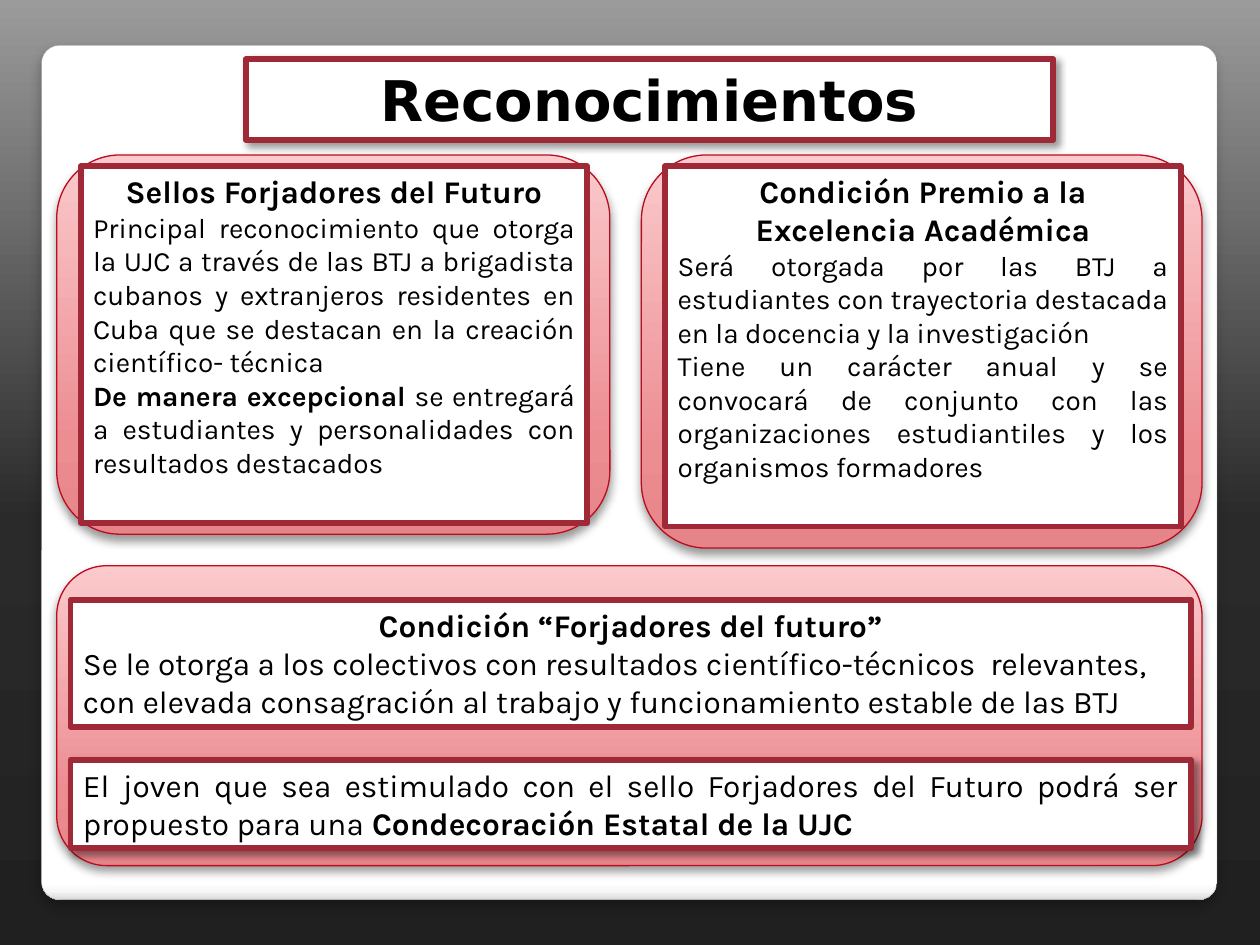
"""Build the Reconocimientos slide."""
from dataclasses import dataclass

from lxml import etree
from pptx import Presentation
from pptx.dml.color import RGBColor
from pptx.enum.shapes import MSO_SHAPE
from pptx.enum.text import MSO_ANCHOR, MSO_AUTO_SIZE, PP_ALIGN
from pptx.oxml.ns import qn
from pptx.util import Inches, Pt

ROUNDED = MSO_SHAPE.ROUNDED_RECTANGLE
ALTERNATE = MSO_SHAPE.FLOWCHART_ALTERNATE_PROCESS
RECTANGLE = MSO_SHAPE.RECTANGLE
CENTER, JUSTIFY, LEFT = PP_ALIGN.CENTER, PP_ALIGN.JUSTIFY, PP_ALIGN.LEFT
TOP, MIDDLE = MSO_ANCHOR.TOP, MSO_ANCHOR.MIDDLE
NO_AUTOFIT = MSO_AUTO_SIZE.NONE
TITLE_ONLY = 5


@dataclass(frozen=True)
class Theme:
    """Colours, fonts, sizes and effects of the slide."""
    text: str = "000000"
    paper: str = "FFFFFF"
    frame: str = "9F2936"
    card_edge: str = "BC0B1F"
    panel_edge: str = "A4A4A4"
    backdrop: tuple = ((0, "202020"), (45, "2A2A2A"), (100, "9B9B9B"))
    panel: tuple = ((0, "FFFFFF"), (98, "FFFFFF"), (99, "F7F7F7"), (100, "DADADA"))
    card: tuple = ((0, "E68589"), (25, "EC8D92"), (100, "FBCACC"))
    title_font: str = "DejaVu Sans"
    body_font: str = "Karla"
    title_size: int = 32
    large: int = 18
    small: int = 16
    frame_width: float = 3.35
    panel_shadow: tuple = (25, 6, 4, 90)
    card_shadow: tuple = (40, 5.2, 3, 90)
    frame_shadow: tuple = (40, 4, 3, 45)


THEME = Theme()


def place(shape, box):
    """Move and size a shape to a box in inches."""
    shape.left, shape.top, shape.width, shape.height = map(Inches, box)


def set_gradient(fill, owner, stops, angle):
    """Give a fill its gradient stops and direction."""
    fill.gradient()
    gradient = next(owner.iter(qn("a:gradFill")))
    stop_list = gradient.find(qn("a:gsLst"))
    for old_stop in list(stop_list):
        stop_list.remove(old_stop)
    for position, colour in stops:
        stop = etree.SubElement(stop_list, qn("a:gs"), pos=str(position * 1000))
        etree.SubElement(stop, qn("a:srgbClr"), val=colour)
    gradient.find(qn("a:lin")).set("ang", str(angle * 60000))


def set_line(shape, colour, width):
    """Outline a shape."""
    shape.line.color.rgb = RGBColor.from_string(colour)
    shape.line.width = Pt(width)


def set_shadow(shape, shadow=None):
    """Replace the inherited shadow with the given one, if any."""
    shape.shadow.inherit = False
    if shadow:
        opacity, blur, distance, angle = shadow
        effects = shape._element.spPr.find(qn("a:effectLst"))
        outer = etree.SubElement(
            effects, qn("a:outerShdw"), blurRad=str(Pt(blur)), dist=str(Pt(distance)),
            dir=str(angle * 60000), algn="ctr", rotWithShape="0")
        colour = etree.SubElement(outer, qn("a:srgbClr"), val=THEME.text)
        etree.SubElement(colour, qn("a:alpha"), val=str(opacity * 1000))


def add_gradient_shape(slide, kind, box, stops, angle, edge, shadow):
    """Add a gradient-filled background shape."""
    shape = slide.shapes.add_shape(kind, *map(Inches, box))
    set_gradient(shape.fill, shape._element.spPr, stops, angle)
    set_line(shape, *edge)
    set_shadow(shape, shadow)
    return shape


def style_frame(shape, shadow=None, anchor=TOP):
    """Style a shape as a white box with a dark red border."""
    shape.fill.solid()
    shape.fill.fore_color.rgb = RGBColor.from_string(THEME.paper)
    set_line(shape, THEME.frame, THEME.frame_width)
    set_shadow(shape, shadow)
    shape.text_frame.word_wrap = True
    shape.text_frame.auto_size = NO_AUTOFIT
    shape.text_frame.vertical_anchor = anchor


def write_paragraph(paragraph, align, size, runs, font=THEME.body_font):
    """Write (text, bold) runs into a paragraph."""
    paragraph.alignment = align
    for text, bold in runs:
        run = paragraph.add_run()
        run.text = text
        run.font.name = font
        run.font.size = Pt(size)
        run.font.bold = bold
        run.font.color.rgb = RGBColor.from_string(THEME.text)


def add_framed_text(slide, box, paragraphs, shadow=None):
    """Add a bordered box holding (align, size, runs) paragraphs."""
    frame = slide.shapes.add_shape(RECTANGLE, *map(Inches, box))
    style_frame(frame, shadow)
    body = frame.text_frame
    for index, content in enumerate(paragraphs):
        paragraph = body.add_paragraph() if index else body.paragraphs[0]
        write_paragraph(paragraph, *content)
    return frame


def add_title(slide, box, text):
    """Format the title placeholder and bring it in front of the panel."""
    title = slide.shapes.title
    place(title, box)
    style_frame(title, THEME.frame_shadow, MIDDLE)
    write_paragraph(title.text_frame.paragraphs[0], CENTER, THEME.title_size,
                    [(text, True)], THEME.title_font)
    slide.shapes._spTree.append(title._element)


def main():
    """Build and save the slide."""
    deck = Presentation()
    deck.slide_width, deck.slide_height = Inches(10), Inches(7.5)
    slide = deck.slides.add_slide(deck.slide_layouts[TITLE_ONLY])
    set_gradient(slide.background.fill, slide._element, THEME.backdrop, 270)

    panel = add_gradient_shape(slide, ROUNDED, (0.33, 0.36, 9.33, 6.78), THEME.panel, 90,
                               (THEME.panel_edge, 0.16), THEME.panel_shadow)
    panel.adjustments[0] = 0.021
    add_title(slide, (1.95, 0.47, 6.41, 0.64), "Reconocimientos")

    for card_box in ((0.45, 1.23, 4.39, 3.01), (0.45, 4.49, 9.09, 2.38),
                     (5.09, 1.23, 4.45, 3.12)):
        add_gradient_shape(slide, ALTERNATE, card_box, THEME.card, 270,
                           (THEME.card_edge, 0.75), THEME.card_shadow)

    add_framed_text(slide, (0.64, 1.32, 4.02, 2.83), [
        (CENTER, THEME.large, [("Sellos Forjadores del Futuro", True)]),
        (JUSTIFY, THEME.small, [
            ("Principal reconocimiento que otorga la UJC a través de las BTJ a brigadista "
             "cubanos y extranjeros residentes en Cuba que se destacan en la creación "
             "científico- técnica", False)]),
        (JUSTIFY, THEME.small, [
            ("De manera excepcional ", True),
            ("se entregará a estudiantes y personalidades con resultados destacados", False)]),
    ])
    add_framed_text(slide, (5.28, 1.32, 4.09, 2.86), [
        (CENTER, THEME.large, [("Condición Premio a la Excelencia Académica", True)]),
        (JUSTIFY, THEME.small, [
            ("Será otorgada por las BTJ a estudiantes con trayectoria destacada en la "
             "docencia y la investigación", False)]),
        (JUSTIFY, THEME.small, [
            ("Tiene un carácter anual y se convocará de conjunto con las organizaciones "
             "estudiantiles y los organismos formadores", False)]),
    ])
    add_framed_text(slide, (0.56, 4.76, 8.89, 1.01), [
        (CENTER, THEME.large, [("Condición “Forjadores del futuro”", True)]),
        (LEFT, THEME.large, [
            ("Se le otorga a los colectivos con resultados científico-técnicos  relevantes, "
             "con elevada consagración al trabajo y funcionamiento estable de las BTJ", False)]),
    ])
    proposal = add_framed_text(slide, (0.56, 6.03, 8.89, 0.7), [
        (JUSTIFY, THEME.large, [
            ("El joven que sea estimulado con el sello Forjadores del Futuro podrá ser "
             "propuesto para una", False),
            (" Condecoración Estatal de la UJC", True)]),
    ], THEME.frame_shadow)
    proposal.text_frame.paragraphs[0].space_before = Pt(10)

    deck.save("out.pptx")


if __name__ == "__main__":
    main()
